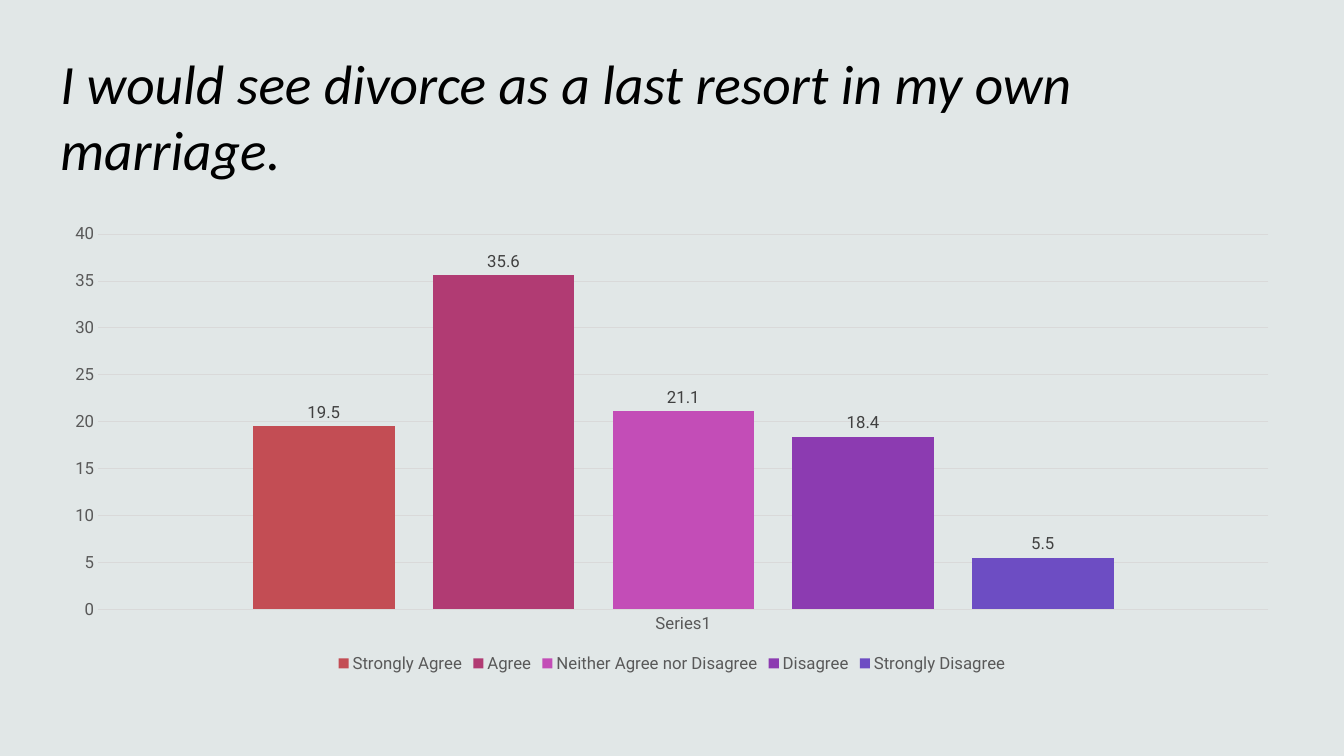
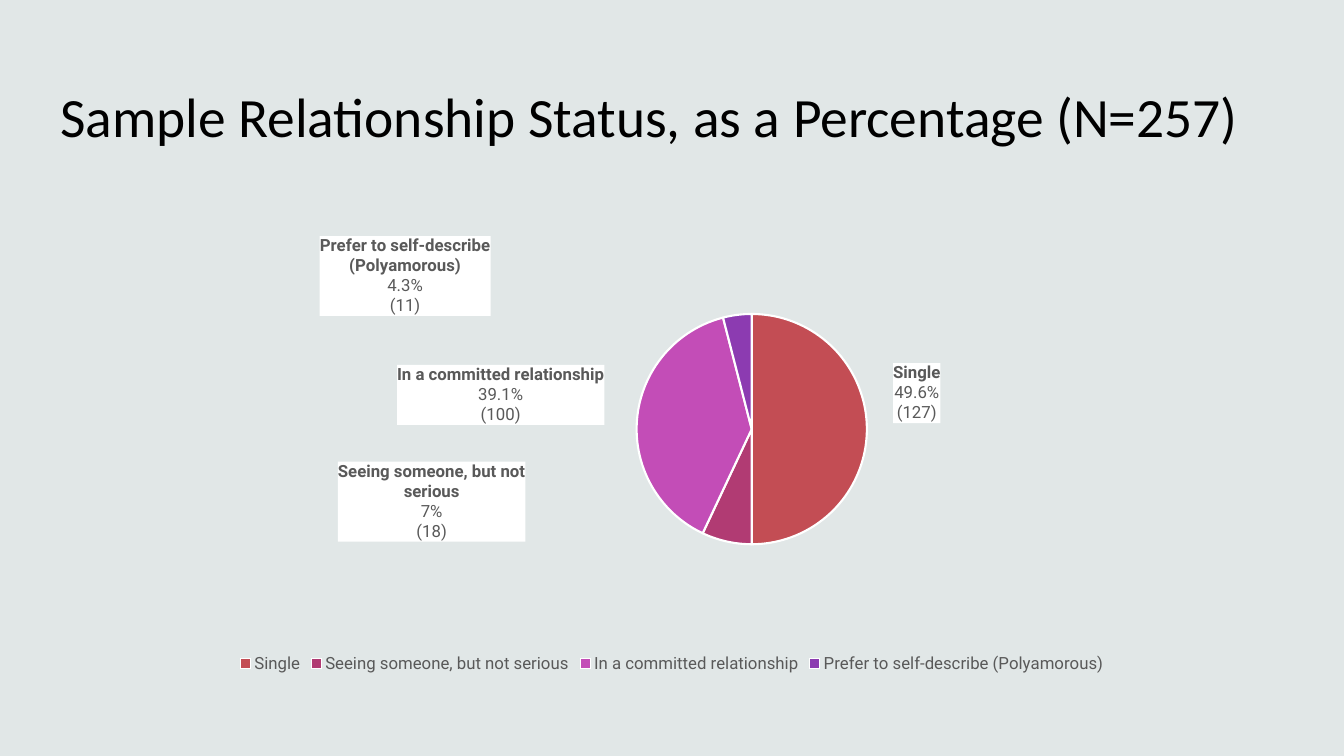
from lxml import etree
from pptx import Presentation
from pptx.chart.data import CategoryChartData
from pptx.dml.color import RGBColor
from pptx.enum import chart as ce, text as te
from pptx.oxml import parse_xml
from pptx.oxml.ns import nsdecls, qn
from pptx.util import Pt

BACKGROUND, INK, GREY, DARK, GRID, WHITE = "E1E7E7", "000000", "595959", "404040", "D9D9D9", "FFFFFF"
PALETTE = ["C34D54", "B13B73", "C34DB7", "8C3BB1", "6D4DC3"]
TITLE_FONT, CHART_FONT = "Calibri", "Roboto"
TITLE_BOX = (36, 30.2, 858, 104.4)
CHART_BOX = (36, 153.4, 888, 330.5)
# left, top, width and height inside the chart
BAR_PLOT = (34.1, 13.9, 836, 268)
PIE_PLOT = (416.8, 70.9, 168.4, 164.5)

DIVORCE_TITLE = "I would see divorce as a last resort in my own marriage."
DIVORCE_ANSWERS = [
    ("Strongly Agree", 19.5),
    ("Agree", 35.6),
    ("Neither Agree nor Disagree", 21.1),
    ("Disagree", 18.4),
    ("Strongly Disagree", 5.5),
]
STATUS_TITLE = "Sample Relationship Status, as a Percentage (N=257)"
# heading lines, rounded share, exact share, count, label shift from its default place
STATUSES = [
    (["Single"], 50, "49.6%", 127, (14.5, -25.8)),
    (["Seeing someone, but not", "serious"], 7, "7%", 18, (-142.8, -61.2)),
    (["In a committed relationship"], 39, "39.1%", 100, (-19.2, 5.1)),
    (["Prefer to self-describe", "(Polyamorous)"], 4, "4.3%", 11, (-175.8, 5)),
]


def rgb(color):
    return RGBColor.from_string(color)


def style(font, name=CHART_FONT, size=12, color=GREY, bold=False, italic=False):
    font.name, font.size, font.bold, font.italic = name, Pt(size), bold, italic
    font.color.rgb = rgb(color)


def write(para, content, **fmt):
    span = para.add_run()
    span.text = content
    style(span.font, **fmt)


def paint(fmt, color):
    fmt.fill.solid()
    fmt.fill.fore_color.rgb = rgb(color)


def draw_line(line, color, width=0.75):
    line.color.rgb = rgb(color)
    line.width = Pt(width)


def set_layout(element, index, lengths, **modes):
    """Lay out a chart element by hand; lengths (x, y and maybe w, h) are in points."""
    for old in element.findall(qn("c:layout")):
        element.remove(old)
    layout = parse_xml(f"<c:layout {nsdecls('c')}><c:manualLayout/></c:layout>")
    shares = [length / whole for length, whole in zip(lengths, CHART_BOX[2:] * 2)]
    for key, value in {**modes, **dict(zip("xywh", shares))}.items():
        etree.SubElement(layout[0], qn(f"c:{key}")).set("val", str(value))
    element.insert(index, layout)


def add_page(deck, title, **fmt):
    page = deck.slides.add_slide(deck.slide_layouts[6])
    frame = page.shapes.add_textbox(*map(Pt, TITLE_BOX)).text_frame
    frame.word_wrap = True
    frame.vertical_anchor = te.MSO_ANCHOR.MIDDLE
    write(frame.paragraphs[0], title, name=TITLE_FONT, size=39.6, color=INK, **fmt)
    return page


def add_chart(page, kind, categories, series, plot_box):
    """Add a chart with a legend below a plot area placed by hand."""
    data = CategoryChartData()
    data.categories = categories
    for name, values in series:
        data.add_series(name, values)
    chart = page.shapes.add_chart(kind, *map(Pt, CHART_BOX), data).chart
    style(chart.font, size=10, color=INK)
    chart.has_title = False
    chart.has_legend = True
    chart.legend.position = ce.XL_LEGEND_POSITION.BOTTOM
    chart.legend.include_in_layout = False
    style(chart.legend.font)
    set_layout(chart.element.find(".//" + qn("c:plotArea")), 0, plot_box,
               layoutTarget="inner", xMode="edge", yMode="edge")
    return chart


def add_bars(page):
    chart = add_chart(page, ce.XL_CHART_TYPE.COLUMN_CLUSTERED, ["Series1"],
                      [(name, [value]) for name, value in DIVORCE_ANSWERS], BAR_PLOT)
    plot = chart.plots[0]
    plot.vary_by_categories = False
    plot.gap_width, plot.overlap = 219, -27
    for series, color in zip(plot.series, PALETTE):
        paint(series.format, color)
        labels = series.data_labels
        labels.show_value = True
        labels.position = ce.XL_LABEL_POSITION.OUTSIDE_END
        style(labels.font, color=DARK)
    for axis in (chart.category_axis, chart.value_axis):
        axis.major_tick_mark = axis.minor_tick_mark = ce.XL_TICK_MARK.NONE
        style(axis.tick_labels.font)
    draw_line(chart.category_axis.format.line, GRID)
    values = chart.value_axis
    values.minimum_scale, values.maximum_scale, values.major_unit = 0, 40, 5
    values.format.line.fill.background()
    draw_line(values.major_gridlines.format.line, GRID)


def label_slice(label, heading, figures, shift):
    frame = label.text_frame
    for index, content in enumerate(heading + figures):
        para = frame.add_paragraph() if index else frame.paragraphs[0]
        write(para, content, bold=index < len(heading))
    label.position = ce.XL_LABEL_POSITION.OUTSIDE_END
    element = frame._txBody.getparent().getparent()
    set_layout(element, 1, shift)
    element.find(qn("c:tx")).addnext(parse_xml(
        f'<c:spPr {nsdecls("c", "a")}><a:solidFill><a:srgbClr val="{WHITE}"/></a:solidFill></c:spPr>'))


def add_pie(page):
    names = [" ".join(status[0]) for status in STATUSES]
    shares = [status[1] for status in STATUSES]
    chart = add_chart(page, ce.XL_CHART_TYPE.PIE, names, [("Series 1", shares)], PIE_PLOT)
    series = chart.plots[0].series[0]
    style(series.data_labels.font)
    for index, (heading, _, percent, count, shift) in enumerate(STATUSES):
        point = series.points[index]
        paint(point.format, PALETTE[index])
        draw_line(point.format.line, WHITE, 1.5)
        label_slice(point.data_label, heading, [percent, f"({count})"], shift)
    for leader in chart.element.iter(qn("c:showLeaderLines")):
        leader.set("val", "0")


def main():
    deck = Presentation()
    deck.slide_width, deck.slide_height = Pt(960), Pt(540)
    paint(deck.slide_master.background, BACKGROUND)
    add_bars(add_page(deck, DIVORCE_TITLE, italic=True))
    add_pie(add_page(deck, STATUS_TITLE))
    deck.save("out.pptx")


if __name__ == "__main__":
    main()
